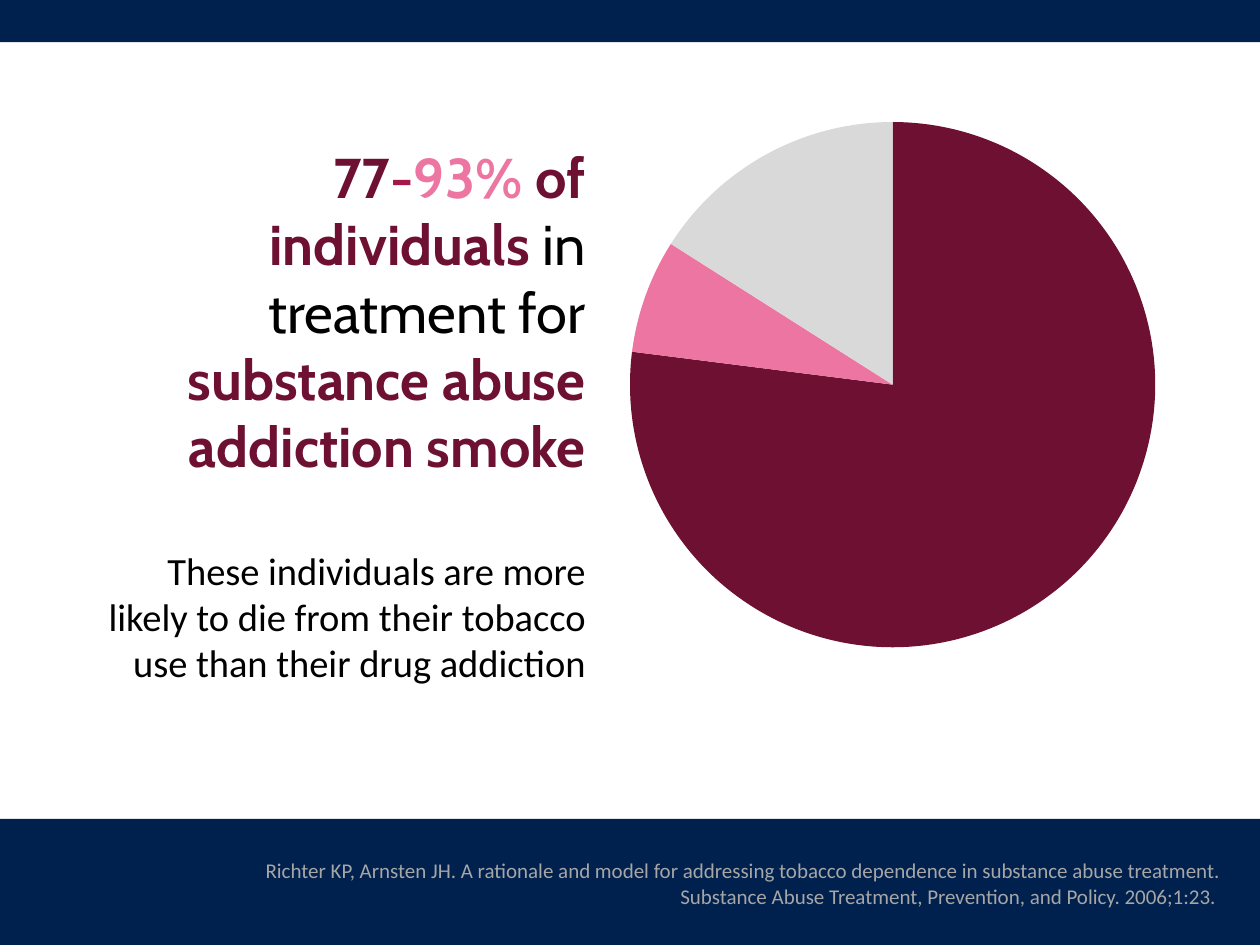
from pptx import Presentation
from pptx import util as u
from pptx.chart import data
from pptx.dml import color
from pptx.enum import chart as ch, shapes, text

COLORS = {"navy": "00204E", "maroon": "6E1031", "crimson": "A4174A", "pink": "EC76A1",
          "light": "D9D9D9", "grey": "A6A6A6", "black": "000000"}


def rgb(name):
    """Return the named colour."""
    return color.RGBColor.from_string(COLORS[name])


def style(font, family, size, shade):
    """Set family, size and colour of a font."""
    font.name, font.size = family, u.Pt(size)
    font.color.rgb = rgb(shade)


def add_band(slide, left, top, width, height):
    """Draw a plain navy band."""
    band = slide.shapes.add_shape(shapes.MSO_SHAPE.RECTANGLE,
                                  u.Cm(left), u.Cm(top), u.Cm(width), u.Cm(height))
    band.shadow.inherit = False
    band.fill.solid()
    band.fill.fore_color.rgb = rgb("navy")
    band.line.fill.background()


def add_frame(slide, left, top, width, height, anchor):
    """Add a wrapping text box and return its text frame."""
    frame = slide.shapes.add_textbox(u.Cm(left), u.Cm(top), u.Cm(width), u.Cm(height)).text_frame
    frame.word_wrap = True
    frame.vertical_anchor = anchor
    return frame


def add_message(slide, left, top, width, height):
    """Write the headline and the remark below it."""
    frame = add_frame(slide, left, top, width, height, text.MSO_ANCHOR.MIDDLE)
    headline, remark = frame.paragraphs[0], frame.add_paragraph()
    headline.alignment = remark.alignment = text.PP_ALIGN.RIGHT
    for words, shade, bold in (("77", "maroon", True), ("-", "crimson", True),
                               ("93% ", "pink", True), ("of individuals ", "maroon", True),
                               ("in treatment for ", "black", False),
                               ("substance abuse addiction smoke", "maroon", True)):
        part = headline.add_run()
        part.text = words
        style(part.font, "Cabin", 32, shade)
        part.font.bold = bold
    remark.text = ("These individuals are more likely to die from their tobacco use "
                   "than their drug addiction")
    remark.space_before = u.Pt(39)
    style(remark.font, "Calibri", 22, "black")


def add_smoking_pie(slide, left, top, width, height):
    """Chart the shares of smokers."""
    shares = data.CategoryChartData()
    shares.categories = ["1", "2", "3"]
    shares.add_series("Series 1", (77, 7, 16))
    pie = slide.shapes.add_chart(ch.XL_CHART_TYPE.PIE, u.Cm(left), u.Cm(top),
                                 u.Cm(width), u.Cm(height), shares).chart
    pie.has_legend = pie.has_title = False
    style(pie.font, "Calibri", 18, "black")
    for index, shade in enumerate(("maroon", "pink", "light")):
        wedge = pie.plots[0].series[0].points[index].format
        wedge.fill.solid()
        wedge.fill.fore_color.rgb = rgb(shade)
        wedge.line.fill.background()


def add_footer(slide, left, top, width, height):
    """Draw the footer band with the citation on it."""
    add_band(slide, left, top, width, height)
    frame = add_frame(slide, left + 3.17, top + 0.66, 22.12, 1.27, text.MSO_ANCHOR.TOP)
    citation = frame.paragraphs[0]
    citation.text = ("Richter KP, Arnsten JH. A rationale and model for addressing tobacco "
                     "dependence in substance abuse treatment.\n"
                     "Substance Abuse Treatment, Prevention, and Policy. 2006;1:23. ")
    citation.alignment = text.PP_ALIGN.RIGHT
    style(citation.font, "Calibri", 12, "grey")


def main():
    """Build and save the slide."""
    deck = Presentation()
    deck.slide_width, deck.slide_height = u.Cm(25.4), u.Cm(19.05)
    slide = deck.slides.add_slide(deck.slide_layouts[6])
    add_message(slide, 1.47, 1.9, 10.59, 12.9)
    add_smoking_pie(slide, 9.53, 2.11, 16.93, 11.29)
    add_footer(slide, -0.42, 16.51, 26.46, 2.54)
    add_band(slide, -0.21, 0, 25.82, 0.85)
    deck.save("out.pptx")


if __name__ == "__main__":
    main()
